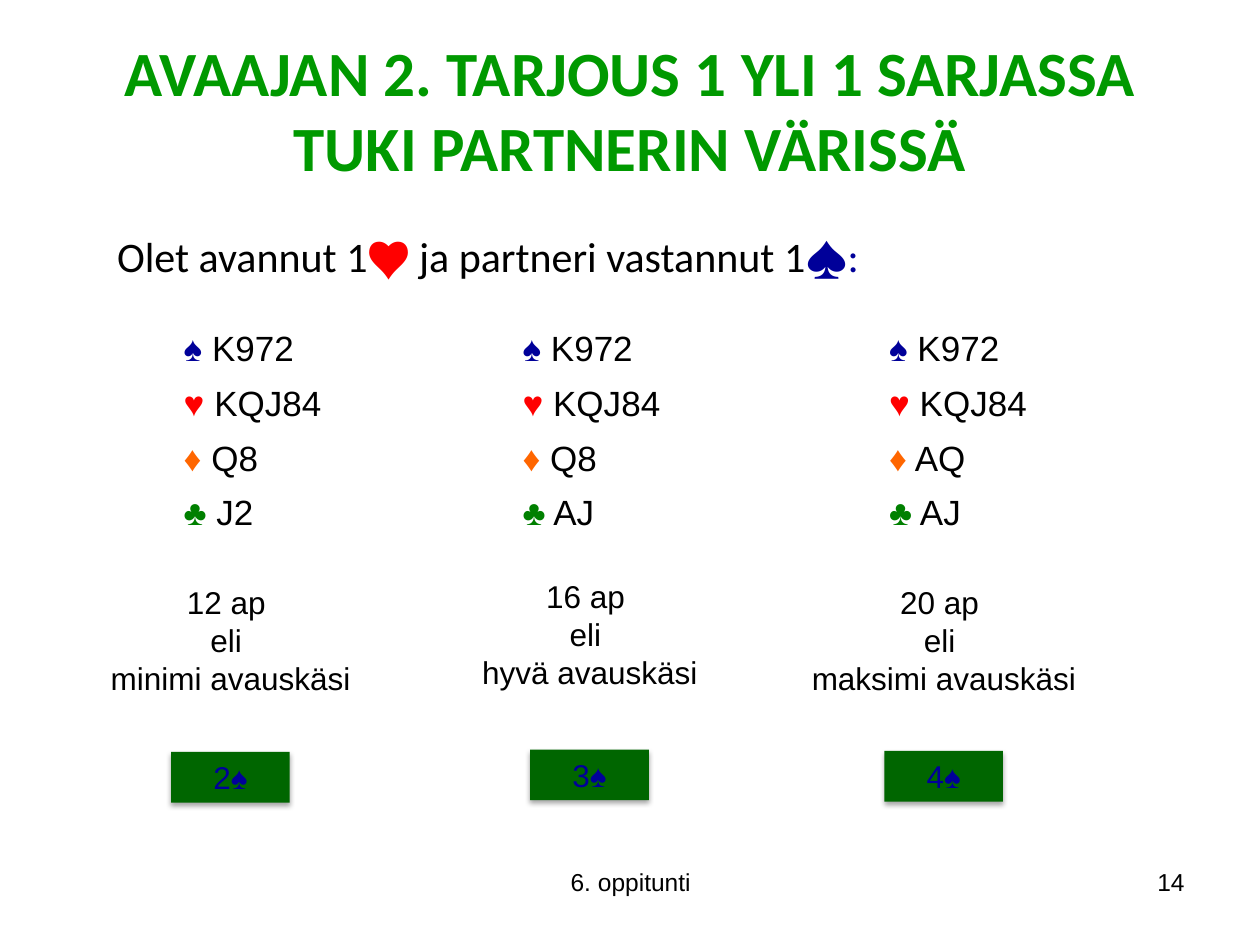
from dataclasses import dataclass

from lxml import etree
from pptx import Presentation
from pptx.dml.color import RGBColor
from pptx.enum import shapes, text
from pptx.oxml import ns
from pptx.util import Cm, Pt

TITLE_GREEN = RGBColor(0x00, 0x99, 0x00)
BOX_GREEN = RGBColor(0x00, 0x66, 0x00)
BLACK = RGBColor(0x00, 0x00, 0x00)
SPADE = RGBColor(0x00, 0x00, 0x99)
HEART = RGBColor(0xFF, 0x00, 0x00)
DIAMOND = RGBColor(0xFF, 0x66, 0x00)
CLUB = RGBColor(0x00, 0x80, 0x00)
SUITS = (("♠", SPADE), ("♥", HEART), ("♦", DIAMOND), ("♣", CLUB))


@dataclass(frozen=True)
class Hand:
    cards: tuple[str, str, str, str]
    column_width: float
    strength: str
    strength_at: tuple[float, float]
    bid: str
    bid_at: tuple[float, float]


HANDS = (
    Hand(("K972", "KQJ84", "Q8", "J2"), 6.83,
         "12 ap \veli \vminimi avauskäsi", (1.5, 11.63), "2♠", (3.45, 15.16)),
    Hand(("K972", "KQJ84", "Q8", "AJ"), 7.39,
         "16 ap \veli \vhyvä avauskäsi", (8.74, 11.51), "3♠", (10.69, 15.11)),
    Hand(("K972", "KQJ84", "AQ", "AJ"), 5.03,
         "20 ap \veli \vmaksimi avauskäsi", (15.88, 11.63), "4♠", (17.83, 15.14)),
)


def style(paragraph, size: float, face: str = "Arial", color=None,
          align=text.PP_ALIGN.LEFT) -> None:
    paragraph.alignment = align
    paragraph.font.size = Pt(size)
    paragraph.font.name = face
    if color is not None:
        paragraph.font.color.rgb = color


def add_spans(paragraph, spans) -> None:
    """Append (wording, colour) pairs as runs."""
    for wording, color in spans:
        span = paragraph.add_run()
        span.text = wording
        span.font.color.rgb = color


def add_label(page, wording: str, left: float, top: float, width: float,
              height: float, size: float, align=text.PP_ALIGN.CENTER):
    box = page.shapes.add_textbox(Cm(left), Cm(top), Cm(width), Cm(height))
    box.text_frame.word_wrap = True
    paragraph = box.text_frame.paragraphs[0]
    paragraph.text = wording
    style(paragraph, size, color=BLACK, align=align)


def add_soft_shadow(shape) -> None:
    shape.shadow.inherit = False
    effects = shape._element.spPr.find(ns.qn("a:effectLst"))
    shadow = etree.SubElement(
        effects, ns.qn("a:outerShdw"), blurRad=str(Pt(3.1)), dist=str(Pt(1.8)),
        dir="5400000", rotWithShape="0")
    color = etree.SubElement(shadow, ns.qn("a:srgbClr"), val=str(BLACK))
    etree.SubElement(color, ns.qn("a:alpha"), val="35000")


def add_bid(page, hand: Hand) -> None:
    left, top = hand.bid_at
    box = page.shapes.add_shape(shapes.MSO_SHAPE.RECTANGLE,
                                Cm(left), Cm(top), Cm(2.39), Cm(1.02))
    box.fill.solid()
    box.fill.fore_color.rgb = BOX_GREEN
    box.line.fill.background()
    add_soft_shadow(box)
    paragraph = box.text_frame.paragraphs[0]
    paragraph.text = hand.bid
    style(paragraph, 18, color=SPADE, align=text.PP_ALIGN.CENTER)


def add_hands_table(page) -> None:
    width = sum(hand.column_width for hand in HANDS)
    table = page.shapes.add_table(len(SUITS), len(HANDS), Cm(3.45), Cm(6.53),
                                  Cm(width), Cm(4.4)).table
    table.first_row = table.horz_banding = False
    for column, hand in enumerate(HANDS):
        table.columns[column].width = Cm(hand.column_width)
        for row, ((suit, color), cards) in enumerate(zip(SUITS, hand.cards)):
            cell = table.cell(row, column)
            cell.fill.background()
            paragraph = cell.text_frame.paragraphs[0]
            style(paragraph, 20, align=text.PP_ALIGN.JUSTIFY)
            add_spans(paragraph, ((suit, color), (f" {cards}", BLACK)))


def add_title(page) -> None:
    title = page.shapes.title
    title.left, title.top = Cm(1.5), Cm(0.53)
    title.width, title.height = Cm(22.4), Cm(3.33)
    title.text_frame.auto_size = text.MSO_AUTO_SIZE.NONE
    paragraph = title.text_frame.paragraphs[0]
    paragraph.text = "AVAAJAN 2. TARJOUS 1 YLI 1 SARJASSA\vTUKI PARTNERIN VÄRISSÄ"
    style(paragraph, 36, "Calibri", TITLE_GREEN, text.PP_ALIGN.CENTER)
    paragraph.font.bold = True


def add_auction(page) -> None:
    box = page.shapes.add_textbox(Cm(2.11), Cm(4.52), Cm(18.59), Cm(1.27))
    box.text_frame.word_wrap = True
    paragraph = box.text_frame.paragraphs[0]
    style(paragraph, 24, "Calibri")
    add_spans(paragraph, (("Olet avannut 1", BLACK), ("♥", HEART),
                          (" ja partneri vastannut 1", BLACK), ("♠:", SPADE)))


def main() -> None:
    deck = Presentation()
    deck.slide_width, deck.slide_height = Cm(25.4), Cm(19.05)
    page = deck.slides.add_slide(deck.slide_layouts.get_by_name("Title Only"))
    add_title(page)
    add_hands_table(page)
    add_auction(page)
    for hand in HANDS:
        add_bid(page, hand)
        add_label(page, hand.strength, *hand.strength_at, 6.3, 2.57, 18)
    add_label(page, "6. oppitunti", 8.69, 17.35, 8.05, 1.32, 14)
    add_label(page, "14", 18.21, 17.35, 5.92, 1.32, 14, text.PP_ALIGN.RIGHT)
    deck.save("out.pptx")


if __name__ == "__main__":
    main()
